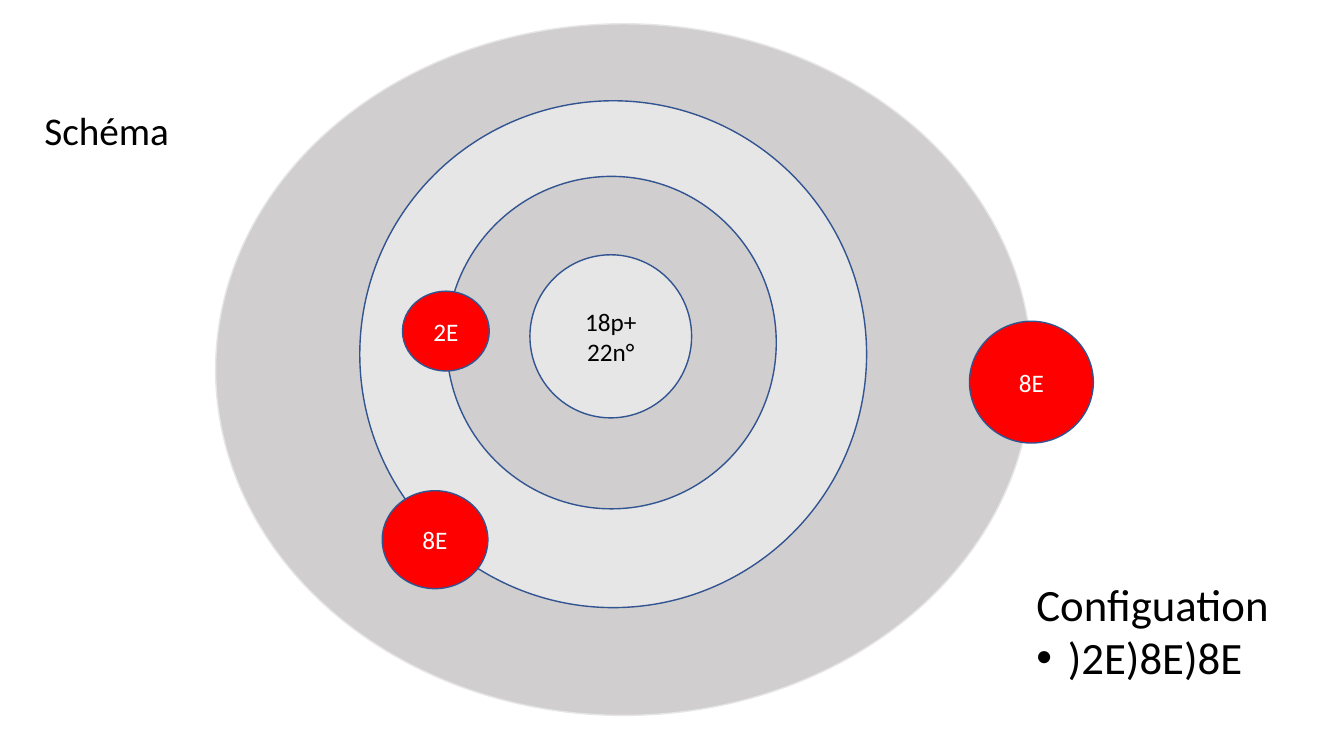
import pptx
import pptx.dml.color
import pptx.enum.shapes
import pptx.enum.text
import pptx.oxml
import pptx.util

Pt = pptx.util.Pt
ALIGN = pptx.enum.text.PP_ALIGN
ANCHOR = pptx.enum.text.MSO_ANCHOR
FONT = "Calibri"
COLORS = {
    "shell": "D0CECE",
    "light": "E7E6E6",
    "electron": "FF0000",
    "outline": "325491",
    "black": "000000",
    "white": "FFFFFF",
}
# Offsets from the atom's top left corner, then width and height, in points
SHELLS = [
    ((0, 0, 583, 494), "shell", "light"),
    ((103, 55, 362, 362), "light", "outline"),
    ((165, 109, 235.5, 237.5), "shell", "outline"),
]
NUCLEUS = ((224.5, 165, 115.5, 116.5), "18p+\n22n°")
ELECTRONS = [
    ((538.5, 212.5, 88.5, 87), "8E"),
    ((119, 333.5, 75.5, 70), "8E"),
    ((133.5, 191, 62, 57), "2E"),
]


def rgb(name):
    return pptx.dml.color.RGBColor.from_string(COLORS[name])


def format_text(text_frame, size, color, alignment, anchor):
    text_frame.word_wrap = True
    text_frame.auto_size = pptx.enum.text.MSO_AUTO_SIZE.NONE
    text_frame.vertical_anchor = anchor
    for paragraph in text_frame.paragraphs:
        paragraph.alignment = alignment
        paragraph.space_before = Pt(0)
        for run in paragraph.runs:
            run.font.name = FONT
            run.font.size = Pt(size)
            run.font.color.rgb = rgb(color)


def place(shape, box):
    shape.left, shape.top, shape.width, shape.height = map(Pt, box)


def add_circle(slide, box, fill, line, text="", text_color="black"):
    shape = slide.shapes.add_shape(
        pptx.enum.shapes.MSO_SHAPE.FLOWCHART_CONNECTOR, *map(Pt, box))
    shape.shadow.inherit = False
    shape.fill.solid()
    shape.fill.fore_color.rgb = rgb(fill)
    shape.line.color.rgb = rgb(line)
    shape.line.width = Pt(1)
    if text:
        shape.text_frame.text = text
        format_text(shape.text_frame, 18, text_color, ALIGN.CENTER, ANCHOR.MIDDLE)


def add_atom(slide, left, top):
    """Draw shells, nucleus and electrons from the given corner."""
    def shifted(box):
        x, y, width, height = box
        return left + x, top + y, width, height

    for box, fill, line in SHELLS:
        add_circle(slide, shifted(box), fill, line)
    box, text = NUCLEUS
    add_circle(slide, shifted(box), "light", "outline", text)
    for box, text in ELECTRONS:
        add_circle(slide, shifted(box), "electron", "outline", text, "white")


def add_title(slide, box):
    title = slide.shapes.title
    place(title, box)
    title.text_frame.text = "Schéma"
    format_text(title.text_frame, 28, "black", ALIGN.LEFT, ANCHOR.TOP)


def set_bullet(paragraph, indent, character=None):
    properties = paragraph._p.get_or_add_pPr()
    properties.set("marL", str(Pt(indent)))
    properties.set("indent", str(-Pt(indent)))
    tag = f'a:buChar char="{character}"' if character else "a:buNone"
    namespace = "http://schemas.openxmlformats.org/drawingml/2006/main"
    properties.append(pptx.oxml.parse_xml(f'<{tag} xmlns:a="{namespace}"/>'))


def add_configuration(slide, box):
    body = slide.placeholders[1]
    place(body, box)
    body.text_frame.text = "Configuation\n)2E)8E)8E"
    format_text(body.text_frame, 32, "black", ALIGN.LEFT, ANCHOR.TOP)
    heading, shells = body.text_frame.paragraphs
    set_bullet(heading, 0)
    set_bullet(shells, 22.5, "•")


def main():
    presentation = pptx.Presentation()
    presentation.slide_width = Pt(960)
    presentation.slide_height = Pt(540)
    slide = presentation.slides.add_slide(presentation.slide_layouts[1])
    add_title(slide, (24.5, 72, 216, 41))
    add_configuration(slide, (733, 408, 216, 85))
    add_atom(slide, 154, 17)
    presentation.save("out.pptx")


if __name__ == "__main__":
    main()
